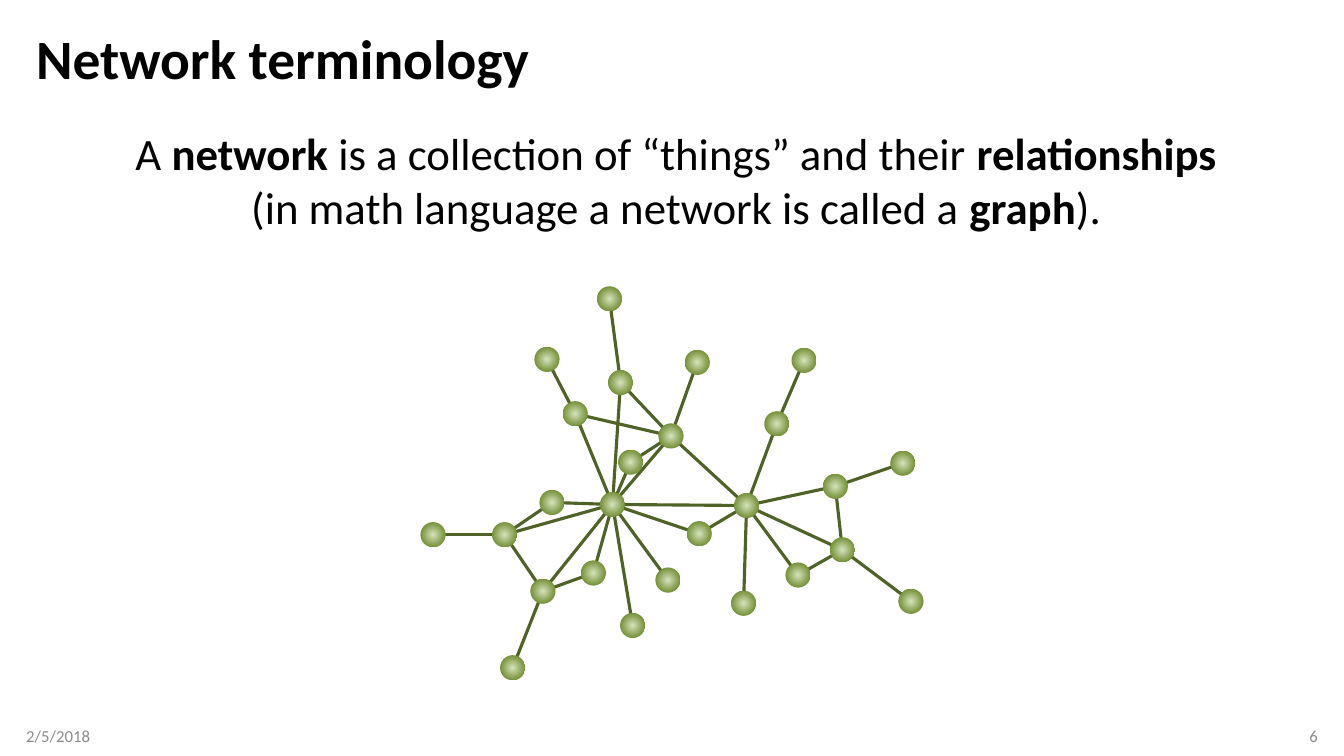
from lxml.etree import SubElement
from pptx import Presentation
from pptx.dml.color import RGBColor
from pptx.enum.shapes import MSO_CONNECTOR, MSO_SHAPE
from pptx.enum.text import MSO_ANCHOR, PP_ALIGN
from pptx.oxml.ns import qn
from pptx.util import Inches, Pt

FONT = "Calibri"
BLACK, GREY = "000000", "8C8C8C"
EDGE, NODE_CENTRE, NODE_RIM = "4F6228", "D7E4BD", "77933C"
NODE_SIZE = 0.25

NODES = {
    "A": (0, 2.34), "B": (0.79, 3.66), "C": (1.09, 2.9), "D": (0.71, 2.34),
    "E": (1.18, 2.02), "F": (1.59, 2.72), "G": (1.13, 0.6), "H": (1.41, 1.14),
    "I": (1.75, 0), "J": (1.86, 0.83), "K": (1.96, 1.62), "L": (1.98, 3.24),
    "M": (2.33, 2.79), "N": (2.64, 2.33), "O": (2.62, 0.63), "P": (3.08, 3.02),
    "Q": (3.62, 2.74), "R": (3.41, 1.24), "S": (3.68, 0.61), "T": (3.99, 1.86),
    "U": (4.06, 2.49), "V": (4.74, 3), "W": (4.66, 1.63), "X": (1.78, 2.04),
    "Y": (2.36, 1.36), "Z": (3.11, 2.05),
}
EDGES = (
    "AD DC BC CF QU NZ KY DE XY XK ZR YO RS TW DX CX FX LX MX XH HG YH "
    "JX IJ XN XZ YZ JY ZQ UV ZU ZT TU ZP XE"
).split()


def color(value):
    """Turn a hex string into a colour."""
    return RGBColor.from_string(value)


def add_text(page, area, lines, size, fill=BLACK, align=PP_ALIGN.LEFT,
             anchor=MSO_ANCHOR.MIDDLE, sides=(0.1, 0.1), spacing=1.0):
    """Write lines of (text, bold) spans into a text box."""
    box = page.shapes.add_textbox(*map(Inches, area))
    frame = box.text_frame
    frame.word_wrap = True
    frame.vertical_anchor = anchor
    frame.margin_left, frame.margin_right = map(Inches, sides)
    for index, spans in enumerate(lines):
        para = frame.add_paragraph() if index else frame.paragraphs[0]
        para.alignment = align
        para.line_spacing = spacing
        for text, bold in spans:
            span = para.add_run()
            span.text = text
            span.font.name = FONT
            span.font.size = Pt(size)
            span.font.bold = bold
            span.font.color.rgb = color(fill)


def add_edge(group, start, end):
    """Join two points with a line."""
    edge = group.shapes.add_connector(
        MSO_CONNECTOR.STRAIGHT, *map(Inches, start + end))
    edge.line.color.rgb = color(EDGE)
    edge.line.width = Pt(2.25)
    SubElement(edge._element.spPr, qn("a:effectLst"))


def add_node(group, left, top):
    """Draw a ball that darkens from its centre to its rim."""
    node = group.shapes.add_shape(
        MSO_SHAPE.OVAL, *map(Inches, (left, top, NODE_SIZE, NODE_SIZE)))
    node.shadow.inherit = False
    node.line.fill.background()
    node.rotation = 327.4
    node.fill.gradient()
    centre, rim = node.fill.gradient_stops
    centre.color.rgb, centre.position = color(NODE_CENTRE), 0
    rim.color.rgb, rim.position = color(NODE_RIM), 0.5
    gradient = node._element.spPr.find(qn("a:gradFill"))
    gradient.remove(gradient.find(qn("a:lin")))
    circle = SubElement(gradient, qn("a:path"), {"path": "circle"})
    SubElement(circle, qn("a:fillToRect"), dict.fromkeys("ltrb", "50000"))


def add_network(page, left, top):
    """Draw the edges, then the nodes over them."""
    group = page.shapes.add_group_shape()
    half = NODE_SIZE / 2
    centres = {name: (left + x + half, top + y + half)
               for name, (x, y) in NODES.items()}
    for start, end in EDGES:
        add_edge(group, centres[start], centres[end])
    for x, y in NODES.values():
        add_node(group, left + x, top + y)


def add_footer(page, left, top, width):
    """Put the date at the left and the page number at the right."""
    add_text(page, (left, top, 3, 0.4), [[("2/5/2018", False)]], 12, GREY,
             sides=(0, 0.1))
    add_text(page, (left + width - 3, top, 3, 0.4), [[("6", False)]], 12, GREY,
             PP_ALIGN.RIGHT, sides=(0.1, 0))


def add_definition(page, area):
    """State what a network is."""
    lines = [
        [("A ", False), ("network", True),
         (" is a collection of “things” and their ", False),
         ("relationships", True)],
        [("(in math language a network is called a ", False),
         ("graph", True), (").", False)],
    ]
    add_text(page, area, lines, 32, align=PP_ALIGN.CENTER,
             anchor=MSO_ANCHOR.TOP)


def main():
    """Build the slide and save it."""
    deck = Presentation()
    deck.slide_width, deck.slide_height = Inches(13.33), Inches(7.5)
    page = deck.slides.add_slide(deck.slide_layouts[6])
    add_text(page, (0.26, 0.25, 12.81, 0.72),
             [[("Network terminology", True)]], 39.6, spacing=0.9)
    add_footer(page, 0.26, 7.1, 12.81)
    add_network(page, 4.17, 2.84)
    add_definition(page, (0.67, 1.2, 12.07, 1.18))
    deck.save("out.pptx")


if __name__ == "__main__":
    main()
